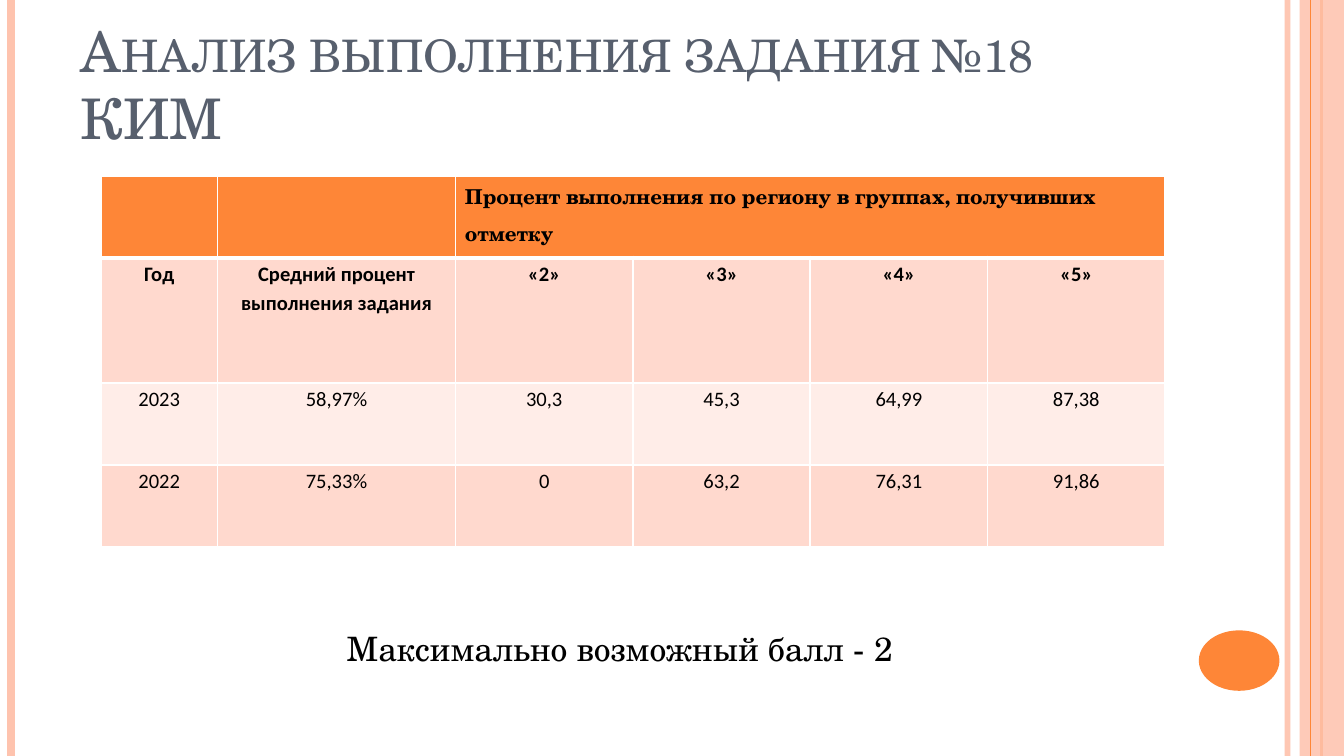
from dataclasses import dataclass

from lxml import etree
from pptx import Presentation
from pptx.dml.color import RGBColor
from pptx.enum.shapes import MSO_CONNECTOR, MSO_SHAPE
from pptx.enum.text import MSO_ANCHOR, PP_ALIGN
from pptx.oxml.ns import qn
from pptx.util import Inches, Pt

STRAIGHT = MSO_CONNECTOR.STRAIGHT
RECTANGLE, OVAL = MSO_SHAPE.RECTANGLE, MSO_SHAPE.OVAL
LEFT, CENTER = PP_ALIGN.LEFT, PP_ALIGN.CENTER
TOP, BOTTOM = MSO_ANCHOR.TOP, MSO_ANCHOR.BOTTOM

WIDTH = 10
HEIGHT = WIDTH * 9 / 16
SERIF, SANS = "TeX Gyre Schola", "Calibri"
ORANGE, PEACH, SLATE = "FE8637", "FEC3AE", "575F6D"
WHITE, BLACK = "FFFFFF", "000000"
ROW_FILLS = [ORANGE, "FFD9CE", "FFEDE8", "FFD9CE"]
COLUMN_WIDTHS = [0.87, 1.77] + [1.32] * 4
ROW_HEIGHTS = [0.61, 0.93, 0.61, 0.61]
GROUP_COLUMN = 2
TABLE_ROWS = [
    ["", "", "Процент выполнения по региону в группах, получивших отметку", "", "", ""],
    ["Год", "Средний процент выполнения задания", "«2»", "«3»", "«4»", "«5»"],
    ["2023", "58,97%", "30,3", "45,3", "64,99", "87,38"],
    ["2022", "75,33%", "0", "63,2", "76,31", "91,86"],
]


@dataclass
class Stripe:
    x: float
    color: str
    weight: float
    opacity: int = 100


STRIPES_BELOW = [
    Stripe(9.58, PEACH, 3, 93),
    Stripe(0.08, PEACH, 4.5),
    Stripe(9.83, ORANGE, 1.5),
]
STRIPE_ABOVE = Stripe(9.75, ORANGE, 0.75)


def rgb(color: str) -> RGBColor:
    return RGBColor.from_string(color)


def set_opacity(element, percent: int) -> None:
    if percent < 100:
        color = next(element.iter(qn("a:srgbClr")))
        etree.SubElement(color, qn("a:alpha"), val=str(percent * 1000))


def draw_stripe(page, stripe: Stripe) -> None:
    x = Inches(stripe.x)
    line = page.shapes.add_connector(STRAIGHT, x, 0, x, Inches(HEIGHT))
    line.line.color.rgb = rgb(stripe.color)
    line.line.width = Pt(stripe.weight)
    properties = line._element.spPr
    set_opacity(properties, stripe.opacity)
    etree.SubElement(properties, qn("a:effectLst"))


def draw_shape(page, kind, place: tuple, color: str, opacity: int = 100) -> None:
    shape = page.shapes.add_shape(kind, *map(Inches, place))
    shape.shadow.inherit = False
    shape.fill.solid()
    shape.fill.fore_color.rgb = rgb(color)
    shape.line.fill.background()
    set_opacity(shape._element.spPr, opacity)


def write(frame, text: str, *, size: float, font: str, color: str = BLACK,
          bold: bool = False, align=LEFT, spacing: float = 1.0,
          small_caps: bool = False) -> None:
    para = frame.paragraphs[0]
    para.alignment = align
    para.line_spacing = spacing
    span = para.add_run()
    span.text = text
    span.font.size = Pt(size)
    span.font.name = font
    span.font.bold = bold
    span.font.color.rgb = rgb(color)
    if small_caps:
        span._r.get_or_add_rPr().set("cap", "small")


def set_borders(cell, top_weight: float, bottom_weight: float) -> None:
    properties = cell._tc.get_or_add_tcPr()
    weights = {"lnL": 1, "lnR": 1, "lnT": top_weight, "lnB": bottom_weight}
    for position, (side, weight) in enumerate(weights.items()):
        border = etree.Element(qn(f"a:{side}"), w=str(Pt(weight)))
        fill = etree.SubElement(border, qn("a:solidFill"))
        etree.SubElement(fill, qn("a:srgbClr"), val=WHITE)
        properties.insert(position, border)


def draw_table(page) -> None:
    frame = page.shapes.add_table(
        len(ROW_HEIGHTS), len(COLUMN_WIDTHS), Inches(0.75), Inches(1.31),
        Inches(sum(COLUMN_WIDTHS)), Inches(sum(ROW_HEIGHTS)))
    table = frame.table
    for column, width in zip(table.columns, COLUMN_WIDTHS):
        column.width = Inches(width)
    for row, height in zip(table.rows, ROW_HEIGHTS):
        row.height = Inches(height)
    table.cell(0, GROUP_COLUMN).merge(table.cell(0, len(COLUMN_WIDTHS) - 1))
    for r, texts in enumerate(TABLE_ROWS):
        header = r == 0
        for c, text in enumerate(texts):
            cell = table.cell(r, c)
            cell.margin_left = cell.margin_right = Inches(0.07)
            cell.margin_top = cell.margin_bottom = 0
            cell.vertical_anchor = TOP
            cell.fill.solid()
            cell.fill.fore_color.rgb = rgb(ROW_FILLS[r])
            set_borders(cell, 3 if r == 1 else 1, 3 if header else 1)
            if text:
                write(cell.text_frame, text, size=11, bold=r < 2,
                      font=SERIF if header else SANS,
                      align=LEFT if header else CENTER, spacing=1.15)


def place_title(page) -> None:
    title = page.shapes.title
    title.left, title.top = Inches(0.5), Inches(0.23)
    title.width, title.height = Inches(8.17), Inches(0.94)
    title.text_frame.vertical_anchor = BOTTOM
    title.text_frame.word_wrap = True
    write(title.text_frame, "Анализ выполнения задания №18 КИМ",
          size=30, font=SERIF, color=SLATE, small_caps=True)


def main() -> None:
    deck = Presentation()
    deck.slide_width, deck.slide_height = Inches(WIDTH), Inches(HEIGHT)
    page = deck.slides.add_slide(deck.slide_layouts[5])
    page.background.fill.solid()
    page.background.fill.fore_color.rgb = rgb(WHITE)

    for stripe in STRIPES_BELOW:
        draw_stripe(page, stripe)
    draw_shape(page, RECTANGLE, (9.67, 0, 0.33, HEIGHT), PEACH, 87)
    draw_stripe(page, STRIPE_ABOVE)
    draw_shape(page, OVAL, (8.92, 4.69, 0.6, 0.45), ORANGE)

    place_title(page)
    draw_table(page)
    box = page.shapes.add_textbox(*map(Inches, (2.48, 4.62, 4.28, 0.4)))
    box.text_frame.word_wrap = False
    write(box.text_frame, "Максимально возможный балл - 2", size=18, font=SERIF)
    deck.save("out.pptx")


if __name__ == "__main__":
    main()
